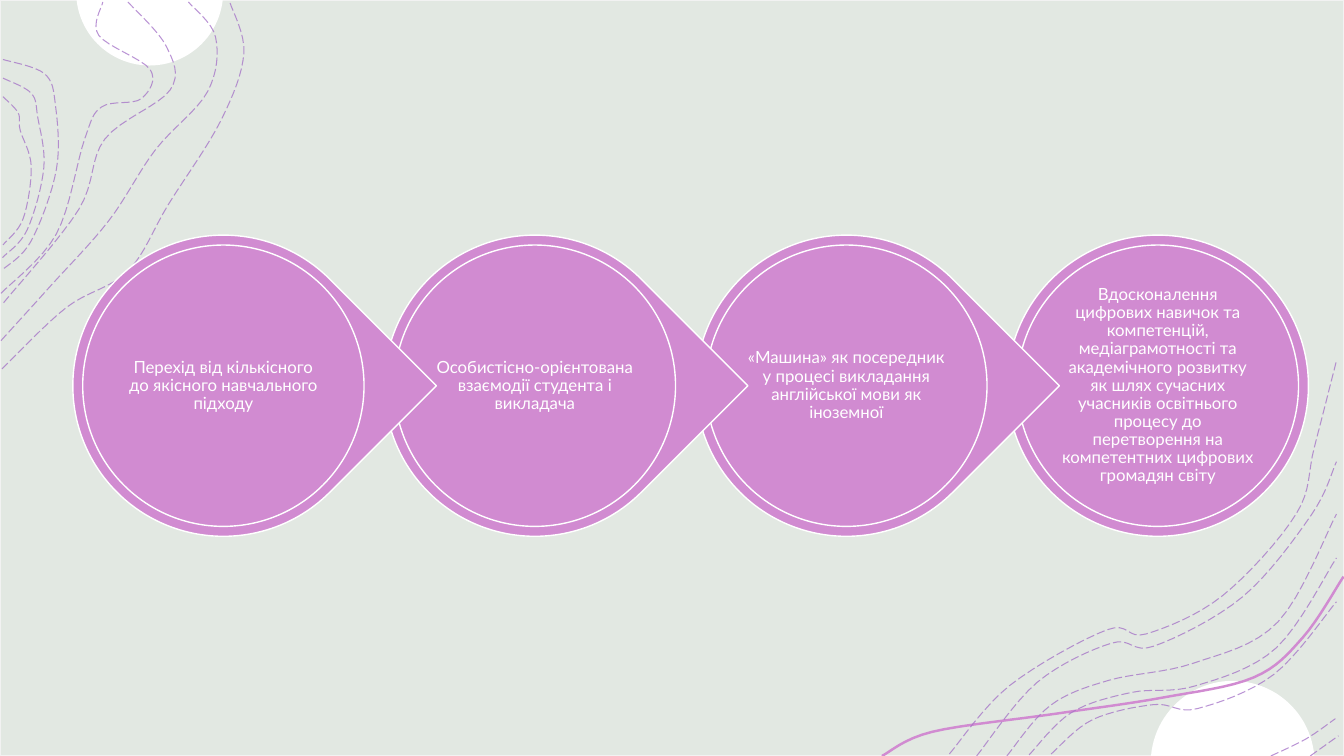
import math
from dataclasses import dataclass

import lxml.etree
import pptx
import pptx.dml.color
import pptx.enum.dml
import pptx.enum.shapes
import pptx.enum.text
import pptx.oxml.ns
import pptx.util

Cm = pptx.util.Cm
Shape = pptx.enum.shapes.MSO_SHAPE


@dataclass(frozen=True)
class Theme:
    page: str = "E2E8E2"
    edge: str = "F2F2F2"
    white: str = "FFFFFF"
    accent: str = "D18BD1"
    contour: str = "A471C7"
    contour_alpha: int = 75000
    contour_width: float = 0.75
    wave_width: float = 1.75
    outline_width: float = 1
    font: str = "Lato"
    text_size: int = 12


THEME = Theme()
WIDTH, HEIGHT = Cm(33.87), Cm(19.05)
UNIT = Cm(0.0254)

FIRST_CENTRE, CENTRE_Y, PITCH = 5.63, 9.72, 7.85
OUTER, INNER, LABEL = 7.59, 7.09, 5.05

STEPS = [
    "Перехід від кількісного до якісного навчального підходу",
    "Особистісно-орієнтована взаємодії студента і викладача",
    "«Машина» як посередник у процесі викладання англійської мови як іноземної",
    "Вдосконалення цифрових навичок та компетенцій, медіаграмотності та "
    "академічного розвитку як шлях сучасних учасників освітнього процесу до "
    "перетворення на компетентних цифрових громадян світу",
]

CAPS = [(148.5, 0, 72.5, 65), (1223, 750, 81, -74.5)]

WAVE = [(875, 750), (925, 726), (1048, 708), (1154, 692), (1244, 672), (1293, 632), (1333, 572)]

CONTOURS = [
    [(2, 366), (66, 305), (127, 269), (167, 203), (219, 120), (242, 53), (228, 2)],
    [(1, 338), (50, 284), (108, 219), (154, 149), (206, 91), (214, 37), (187, 2)],
    [(127, 2), (165, 46), (169, 89), (104, 138), (78, 208), (3, 301)],
    [(1, 291), (56, 232), (84, 138), (101, 106), (140, 98), (149, 69), (98, 35), (102, 2)],
    [(942, 748), (1002, 680), (1098, 625), (1137, 629), (1213, 591), (1286, 510),
     (1304, 444), (1326, 358)],
    [(969, 750), (1029, 677), (1103, 638), (1145, 641), (1233, 592), (1301, 511), (1326, 458)],
    [(1300, 750), (1328, 730)],
    [(1261, 750), (1296, 733), (1325, 713)],
]

FAMILIES = [
    ([(3, 59), (44, 73), (55, 104), (56, 168), (31, 239), (2, 268)],
     [(3, 96), (18, 112), (20, 129), (31, 165), (23, 217), (3, 243)]),
    ([(1043, 748), (1084, 714), (1145, 699), (1188, 703), (1264, 669), (1326, 597)],
     [(999, 750), (1042, 700), (1100, 675), (1184, 658), (1268, 617), (1326, 510)]),
]


def rgb(value):
    return pptx.dml.color.RGBColor.from_string(value)


def blend(first, last, share):
    return [
        tuple(a + (b - a) * share for a, b in zip(p, q))
        for p, q in zip(first, last)
    ]


def smooth_path(knots, samples=8):
    padded = [knots[0], *knots, knots[-1]]
    points = [knots[0]]
    for a, b, c, d in zip(padded, padded[1:], padded[2:], padded[3:]):
        for k in range(1, samples + 1):
            t = k / samples
            points.append(tuple(
                q + t * (r - p) / 2
                + t * t * (2 * p - 5 * q + 4 * r - s) / 2
                + t ** 3 * (3 * q - p - 3 * r + s) / 2
                for p, q, r, s in zip(a, b, c, d)
            ))
    return points


def cap_path(centre_x, edge_y, half_width, height, samples=48):
    sign = math.copysign(1, height)
    radius = (half_width ** 2 + height ** 2) / (2 * abs(height))
    centre_y = edge_y + height - sign * radius
    start = math.asin((edge_y - centre_y) / radius)
    sweep = sign * math.pi - 2 * start
    angles = [start + sweep * k / samples for k in range(samples + 1)]
    return [(centre_x + radius * math.cos(a), centre_y + radius * math.sin(a)) for a in angles]


def add_path(s, points, closed):
    scaled = [(x * UNIT, y * UNIT) for x, y in points]
    builder = s.shapes.build_freeform(*scaled[0])
    builder.add_line_segments(scaled[1:], close=closed)
    sp = builder.convert_to_shape()
    sp.shadow.inherit = False
    return sp


def add_area(s, points, color):
    sp = add_path(s, points, True)
    sp.fill.solid()
    sp.fill.fore_color.rgb = rgb(color)
    sp.line.fill.background()


def add_curve(s, knots, color, width):
    sp = add_path(s, smooth_path(knots), False)
    sp.fill.background()
    sp.line.color.rgb = rgb(color)
    sp.line.width = pptx.util.Pt(width)
    return sp


def add_contour(s, knots):
    sp = add_curve(s, knots, THEME.contour, THEME.contour_width)
    sp.line.dash_style = pptx.enum.dml.MSO_LINE.LONG_DASH
    qn = pptx.oxml.ns.qn
    color = sp._element.spPr.find(qn("a:ln")).find(".//" + qn("a:srgbClr"))
    lxml.etree.SubElement(color, qn("a:alpha"), val=str(THEME.contour_alpha))


def add_preset(s, kind, left, top, width, height, fill, line):
    sp = s.shapes.add_shape(kind, left, top, width, height)
    sp.shadow.inherit = False
    sp.fill.solid()
    sp.fill.fore_color.rgb = rgb(fill)
    sp.line.color.rgb = rgb(line)
    sp.line.width = pptx.util.Pt(THEME.outline_width)
    return sp


def centred_box(centre_x, size):
    return Cm(centre_x - size / 2), Cm(CENTRE_Y - size / 2), Cm(size), Cm(size)


def add_label(s, centre_x, text):
    tf = s.shapes.add_textbox(*centred_box(centre_x, LABEL)).text_frame
    tf.word_wrap = True
    tf.vertical_anchor = pptx.enum.text.MSO_ANCHOR.MIDDLE
    tf.margin_left = tf.margin_right = tf.margin_top = tf.margin_bottom = Cm(0.04)
    p = tf.paragraphs[0]
    p.alignment = pptx.enum.text.PP_ALIGN.CENTER
    p.line_spacing = 0.9
    r = p.add_run()
    r.text = text
    r.font.name = THEME.font
    r.font.size = pptx.util.Pt(THEME.text_size)
    r.font.color.rgb = rgb(THEME.white)


def add_step(s, index, text):
    centre_x = FIRST_CENTRE + PITCH * index
    is_last = index == len(STEPS) - 1
    kind = Shape.OVAL if is_last else Shape.TEAR
    outer = add_preset(s, kind, *centred_box(centre_x, OUTER), THEME.accent, THEME.white)
    outer.rotation = 0 if is_last else 45
    add_preset(s, Shape.OVAL, *centred_box(centre_x, INNER), THEME.accent, THEME.white)
    add_label(s, centre_x, text)


def main():
    prs = pptx.Presentation()
    prs.slide_width, prs.slide_height = WIDTH, HEIGHT
    s = prs.slides.add_slide(prs.slide_layouts[6])
    add_preset(s, Shape.RECTANGLE, 0, 0, WIDTH, HEIGHT, THEME.page, THEME.edge)
    for cap in CAPS:
        add_area(s, cap_path(*cap), THEME.white)
    add_curve(s, WAVE, THEME.accent, THEME.wave_width)
    for knots in CONTOURS:
        add_contour(s, knots)
    for first, last in FAMILIES:
        for share in (0, 0.5, 1):
            add_contour(s, blend(first, last, share))
    for index, text in reversed(list(enumerate(STEPS))):
        add_step(s, index, text)
    prs.save("out.pptx")


if __name__ == "__main__":
    main()
